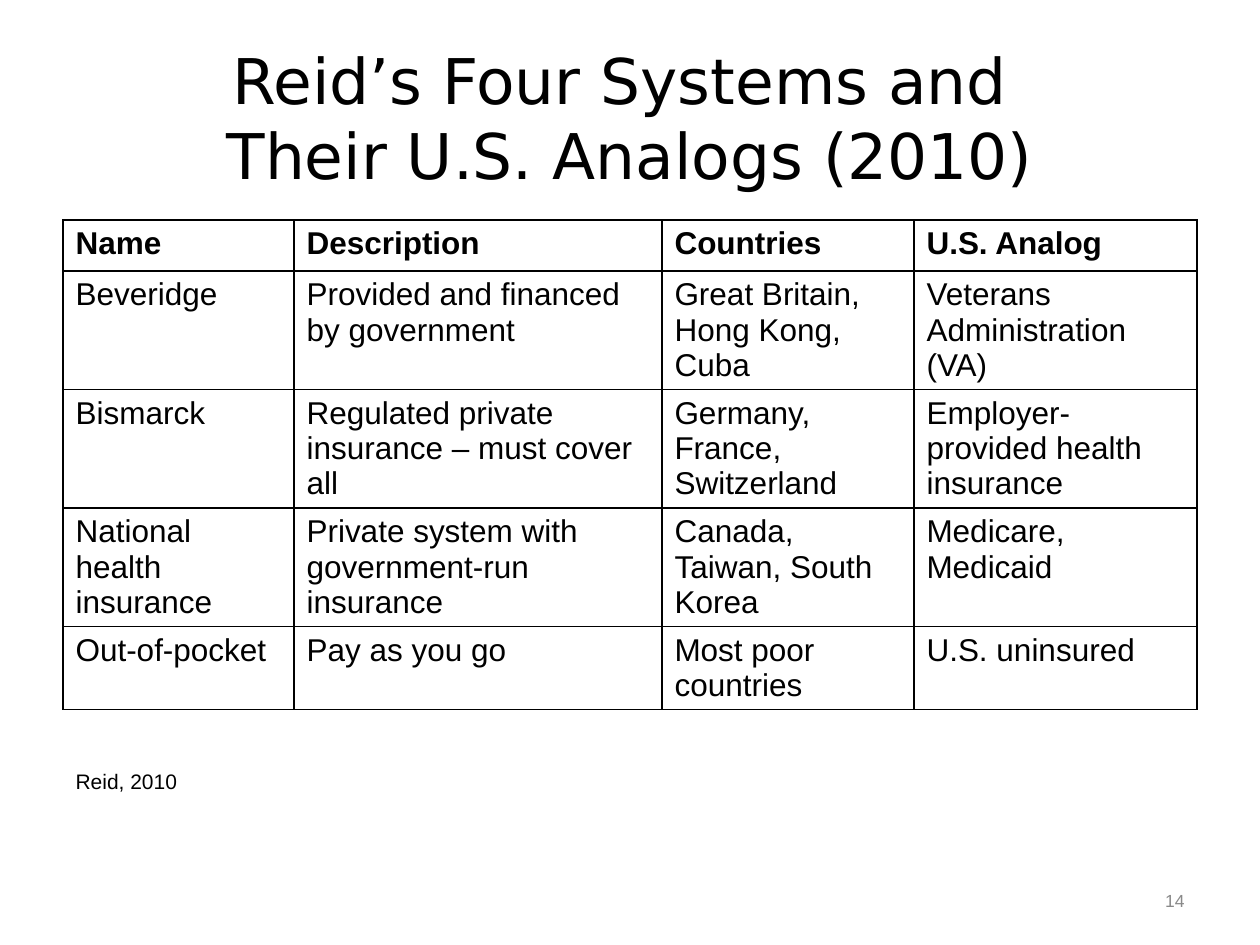
"""Build a slide with a table of four health systems and their U.S. analogs."""
from dataclasses import dataclass

import lxml.etree
import pptx
import pptx.dml.color
import pptx.enum.text
import pptx.oxml.ns
import pptx.util

EMU_PER_PX = 914400 / 126
BLACK = pptx.dml.color.RGBColor(0x00, 0x00, 0x00)
GRAY = pptx.dml.color.RGBColor(0x89, 0x89, 0x89)
WHITE = pptx.dml.color.RGBColor(0xFF, 0xFF, 0xFF)
ALIGN = pptx.enum.text.PP_ALIGN
ANCHOR = pptx.enum.text.MSO_ANCHOR


@dataclass(frozen=True)
class Box:
    left: int
    top: int
    width: int
    height: int


@dataclass(frozen=True)
class TextStyle:
    size: int
    font: str = "Arial"
    color: pptx.dml.color.RGBColor = BLACK
    bold: bool = False
    align: ALIGN = ALIGN.LEFT
    anchor: ANCHOR = ANCHOR.TOP


@dataclass(frozen=True)
class HealthSystem:
    name: str
    description: str
    countries: str
    analog: str
    height: int

    def texts(self) -> tuple[str, ...]:
        return self.name, self.description, self.countries, self.analog


TITLE_STYLE = TextStyle(36, "DejaVu Sans", align=ALIGN.CENTER, anchor=ANCHOR.MIDDLE)
HEADER_STYLE = TextStyle(18, bold=True)
CELL_STYLE = TextStyle(18)
SOURCE_STYLE = TextStyle(12)
NUMBER_STYLE = TextStyle(10, color=GRAY, align=ALIGN.RIGHT, anchor=ANCHOR.MIDDLE)

COLUMN_WIDTHS = (231, 368, 252, 283)
SYSTEMS = (
    HealthSystem("Name", "Description", "Countries", "U.S. Analog", 51),
    HealthSystem("Beveridge", "Provided and financed by government",
                 "Great Britain, Hong Kong, Cuba", "Veterans Administration (VA)", 118),
    HealthSystem("Bismarck", "Regulated private insurance – must cover all",
                 "Germany, France, Switzerland", "Employer-provided health insurance", 118),
    HealthSystem("National health insurance", "Private system with government-run insurance",
                 "Canada, Taiwan, South Korea", "Medicare, Medicaid", 118),
    HealthSystem("Out-of-pocket", "Pay as you go", "Most poor countries",
                 "U.S. uninsured", 83),
)


def px(length: int) -> pptx.util.Emu:
    return pptx.util.Emu(round(length * EMU_PER_PX))


def place(box: Box) -> tuple[pptx.util.Emu, ...]:
    return px(box.left), px(box.top), px(box.width), px(box.height)


def write(frame: pptx.text.text.TextFrame, text: str, style: TextStyle) -> None:
    frame.text = text
    for paragraph in frame.paragraphs:
        paragraph.alignment = style.align
        for run in paragraph.runs:
            run.font.size = pptx.util.Pt(style.size)
            run.font.name = style.font
            run.font.bold = style.bold
            run.font.color.rgb = style.color


def fill_text_shape(shape, text: str, box: Box, style: TextStyle) -> None:
    shape.left, shape.top, shape.width, shape.height = place(box)
    frame = shape.text_frame
    frame.word_wrap = True
    frame.auto_size = pptx.enum.text.MSO_AUTO_SIZE.NONE
    frame.vertical_anchor = style.anchor
    write(frame, text, style)


def remove_bullet(paragraph) -> None:
    properties = paragraph._p.get_or_add_pPr()
    properties.set("marL", "0")
    properties.set("indent", "0")
    lxml.etree.SubElement(properties, pptx.oxml.ns.qn("a:buNone"))


def draw_borders(cell) -> None:
    properties = cell._tc.get_or_add_tcPr()
    for side in ("lnL", "lnR", "lnT", "lnB"):
        border = lxml.etree.SubElement(
            properties, pptx.oxml.ns.qn(f"a:{side}"), w=str(pptx.util.Pt(1)))
        solid = lxml.etree.SubElement(border, pptx.oxml.ns.qn("a:solidFill"))
        lxml.etree.SubElement(solid, pptx.oxml.ns.qn("a:srgbClr"), val=str(BLACK))


def draw_systems(slide, left: int, top: int) -> None:
    box = Box(left, top, sum(COLUMN_WIDTHS), sum(system.height for system in SYSTEMS))
    table = slide.shapes.add_table(len(SYSTEMS), len(COLUMN_WIDTHS), *place(box)).table
    table.first_row = False
    table.horz_banding = False
    for column, width in zip(table.columns, COLUMN_WIDTHS):
        column.width = px(width)
    for index, (row, system) in enumerate(zip(table.rows, SYSTEMS)):
        row.height = px(system.height)
        for cell, text in zip(row.cells, system.texts()):
            draw_borders(cell)
            cell.fill.background()
            write(cell.text_frame, text, CELL_STYLE if index else HEADER_STYLE)


def main() -> None:
    presentation = pptx.Presentation()
    presentation.slide_width = px(1260)
    presentation.slide_height = px(945)
    slide = presentation.slides.add_slide(presentation.slide_layouts[1])
    slide.background.fill.solid()
    slide.background.fill.fore_color.rgb = WHITE

    fill_text_shape(slide.shapes.title, "Reid’s Four Systems and \vTheir U.S. Analogs (2010)",
                    Box(63, 38, 1134, 158), TITLE_STYLE)
    draw_systems(slide, 63, 220)
    source = slide.placeholders[1]
    fill_text_shape(source, "Reid, 2010", Box(63, 762, 145, 76), SOURCE_STYLE)
    remove_bullet(source.text_frame.paragraphs[0])
    number_box = Box(1126, 863, 71, 76)
    page_number = slide.shapes.add_textbox(*place(number_box))
    fill_text_shape(page_number, "14", number_box, NUMBER_STYLE)

    presentation.save("out.pptx")


if __name__ == "__main__":
    main()
